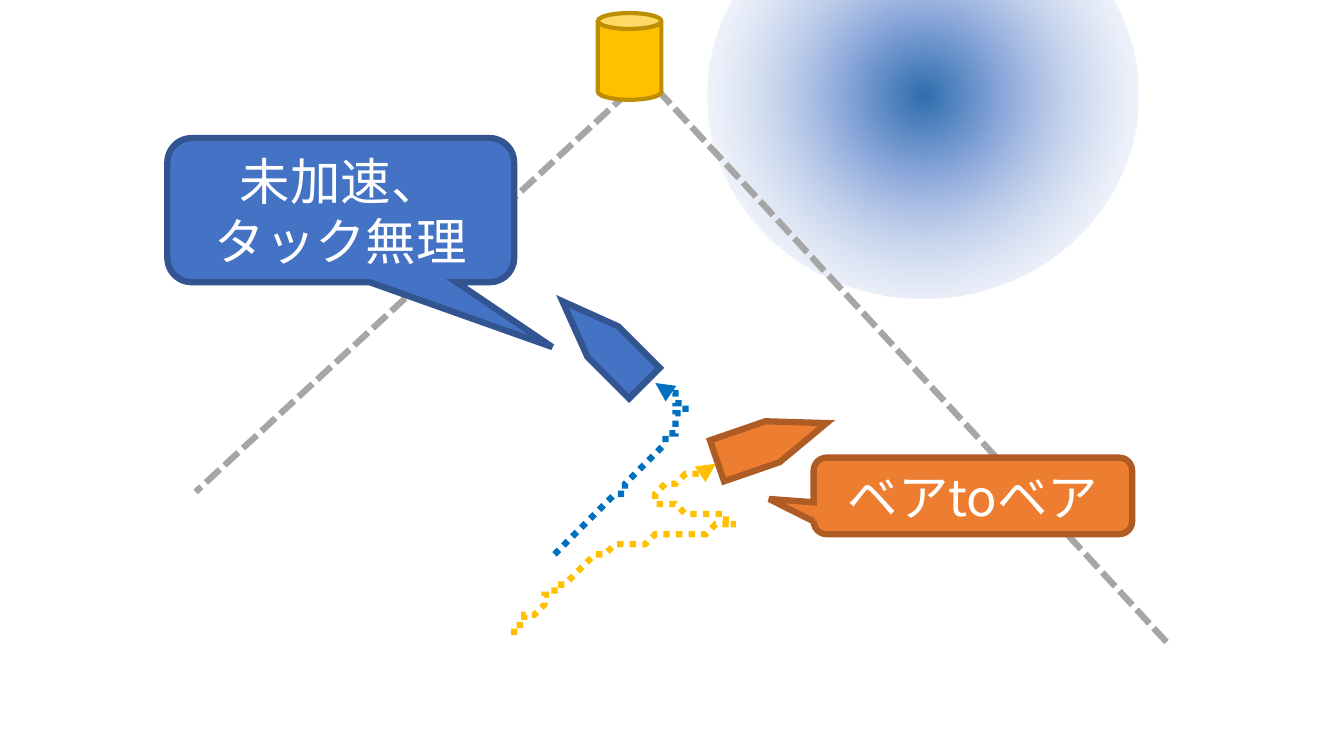
"""Builds a sailing slide: two boats rounding a mark, their tracks, a wind patch and two callouts."""
from lxml import etree
from pptx import Presentation, util as u
from pptx.dml.color import RGBColor
from pptx.enum import dml, shapes, text
from pptx.oxml import parse_xml
from pptx.oxml.ns import nsdecls, qn

FONT = "Noto Sans CJK JP"
BLUE, BLUE_EDGE = "4472C4", "325491"
ORANGE, ORANGE_EDGE = "ED7D31", "AF5C24"
GOLD, GOLD_EDGE = "FFC000", "BD8E00"
GREY, TRACK_BLUE = "A6A6A6", "0070C0"
CURVE_STEPS = 16

presentation = Presentation()
presentation.slide_width = u.Inches(13.33)
presentation.slide_height = u.Inches(7.5)
slide = presentation.slides.add_slide(presentation.slide_layouts[6])
CELL = presentation.slide_height / 75


def paint(shape, fill=None, edge=None, width=4.5, dash=None, arrow=False):
    """Colours a shape or connector and removes its shadow."""
    if fill:
        shape.fill.solid()
        shape.fill.fore_color.rgb = RGBColor.from_string(fill)
    elif hasattr(shape, "fill"):
        shape.fill.background()
    if edge:
        shape.line.color.rgb = RGBColor.from_string(edge)
        shape.line.width = u.Pt(width)
        shape.line.dash_style = dash
        outline = shape._element.spPr.find(qn("a:ln"))
        etree.SubElement(outline, qn("a:miter"), lim="800000")
        if arrow:
            etree.SubElement(outline, qn("a:tailEnd"), type="triangle")
    else:
        shape.line.fill.background()
    etree.SubElement(shape._element.spPr, qn("a:effectLst"))


def add_preset(kind, left, top, width, height, adjustments=()):
    """Adds a preset shape placed by grid columns and rows."""
    box = [round(cells * CELL) for cells in (left, top, width, height)]
    shape = slide.shapes.add_shape(kind, *box)
    for index, value in enumerate(adjustments):
        shape.adjustments[index] = value
    return shape


wind = add_preset(shapes.MSO_SHAPE.OVAL, 70.2, -10.8, 42.7, 40.4)
paint(wind)
wind_fill = wind._element.spPr.find(qn("a:noFill"))
wind_fill.getparent().replace(wind_fill, parse_xml(
    f'<a:gradFill {nsdecls("a")}><a:gsLst>'
    '<a:gs pos="0"><a:srgbClr val="2E6DAE"/></a:gs>'
    '<a:gs pos="28000"><a:srgbClr val="8FAADC"/></a:gs>'
    '<a:gs pos="100000"><a:srgbClr val="FFFFFF"><a:alpha val="0"/></a:srgbClr></a:gs>'
    '</a:gsLst><a:path path="circle">'
    '<a:fillToRect l="50000" t="50000" r="50000" b="50000"/></a:path></a:gradFill>'))

for ends in [(64.1, 7.5, 19.4, 48.8), (115.7, 63.7, 64, 7.6)]:
    layline = slide.shapes.add_connector(
        shapes.MSO_CONNECTOR.STRAIGHT, *[round(cells * CELL) for cells in ends])
    paint(layline, edge=GREY, dash=dml.MSO_LINE.SQUARE_DOT)

mark = add_preset(shapes.MSO_SHAPE.CAN, 59.3, 1.3, 6.3, 8.6)
paint(mark, GOLD, GOLD_EDGE, 3)

boats = [
    (54.1, 31.8, 225, BLUE, BLUE_EDGE),
    (70.8, 41.7, 341, ORANGE, ORANGE_EDGE),
]
for left, top, heading, fill, edge in boats:
    boat = add_preset(shapes.MSO_SHAPE.PENTAGON, left, top, 11.5, 4.3, [1.32])
    boat.rotation = heading
    paint(boat, fill, edge)

callouts = [
    (16.6, 13.7, 34.4, 14.3, (0.61, 0.95, 0.17), BLUE, BLUE_EDGE, ["未加速、", "タック無理"]),
    (80.7, 45.4, 31.6, 7.6, (-0.64, 0.04, 0.17), ORANGE, ORANGE_EDGE, ["ベアtoベア"]),
]
for left, top, width, height, pointer, fill, edge, lines in callouts:
    callout = add_preset(
        shapes.MSO_SHAPE.ROUNDED_RECTANGULAR_CALLOUT, left, top, width, height, pointer)
    paint(callout, fill, edge)
    frame = callout.text_frame
    frame.word_wrap = True
    frame.auto_size = text.MSO_AUTO_SIZE.SHAPE_TO_FIT_TEXT
    frame.vertical_anchor = text.MSO_ANCHOR.MIDDLE
    frame.margin_left = frame.margin_right = u.Inches(0.04)
    frame.margin_top = frame.margin_bottom = u.Inches(0.04)
    for index, line in enumerate(lines):
        paragraph = frame.add_paragraph() if index else frame.paragraphs[0]
        paragraph.alignment = text.PP_ALIGN.CENTER
        run = paragraph.add_run()
        run.text = line
        run.font.size = u.Pt(36)
        run.font.name = FONT
        run.font.color.rgb = RGBColor.from_string("FFFFFF")
        etree.SubElement(run.font._element, qn("a:ea"), typeface=FONT)

tracks = [
    (TRACK_BLUE, (55.2, 55), [
        ((60.3, 50), (65.3, 44.9), (67, 42.2)),
        ((68.6, 39.4), (66.9, 38.9), (65.2, 38.5))]),
    (GOLD, (50.7, 63), [
        ((53.7, 59.8), (56.8, 56.6), (60.4, 54.7)),
        ((64.1, 52.9), (71.9, 52.8), (72.6, 51.9)),
        ((73.3, 51), (64.9, 50.4), (64.6, 49.5)),
        ((64.3, 48.6), (67.6, 47.5), (70.9, 46.5))]),
]
for colour, start, curves in tracks:
    builder = slide.shapes.build_freeform(*start, scale=CELL)
    for control_1, control_2, end in curves:
        points = []
        for step in range(1, CURVE_STEPS + 1):
            t = step / CURVE_STEPS
            weights = ((1 - t) ** 3, 3 * t * (1 - t) ** 2, 3 * t ** 2 * (1 - t), t ** 3)
            corners = (start, control_1, control_2, end)
            points.append(tuple(
                sum(weight * corner[axis] for weight, corner in zip(weights, corners))
                for axis in (0, 1)))
        builder.add_line_segments(points, close=False)
        start = end
    track = builder.convert_to_shape()
    paint(track, edge=colour, dash=dml.MSO_LINE.ROUND_DOT, arrow=True)

presentation.save("out.pptx")
